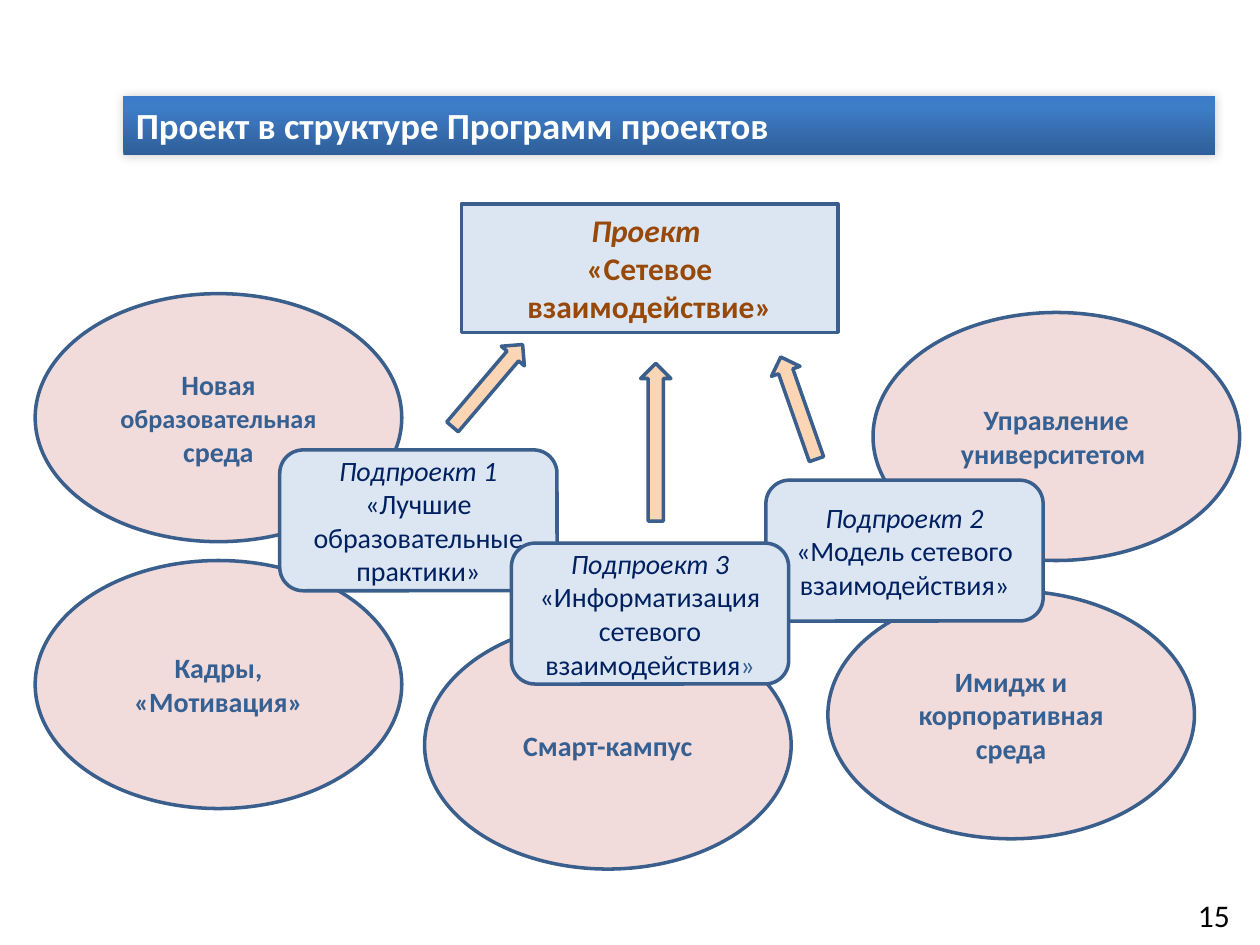
from lxml import etree
from pptx import Presentation
from pptx import util as u
from pptx.dml.color import RGBColor
from pptx.enum import shapes, text
from pptx.oxml import parse_xml

NS = "http://schemas.openxmlformats.org/drawingml/2006/main"
KIND = shapes.MSO_SHAPE
EDGE, PALE, ROSE, PEACH = "3A5F8C", "DCE6F2", "F2DCDB", "FCD5B5"
WHITE, BLACK, BROWN, STEEL, NAVY = "FFFFFF", "000000", "984807", "376092", "002060"


def paint(target, color):
    target.rgb = RGBColor.from_string(color)


def write(frame, paras, size, color, bold=False, align=text.PP_ALIGN.CENTER):
    """Each paragraph is a list of runs: (words, changes to the base font)."""
    frame.word_wrap = True
    for i, runs in enumerate(paras):
        para = frame.paragraphs[0] if i == 0 else frame.add_paragraph()
        para.alignment = align
        for words, diff in runs:
            run = para.add_run()
            run.text = words
            font = run.font
            font.name = "Calibri"
            font.size = u.Pt(diff.get("size", size))
            font.bold = bold
            font.italic = diff.get("italic", False)
            paint(font.color, diff.get("color", color))


def place(slide, kind, box, fill):
    shape = slide.shapes.add_shape(kind, *map(u.Cm, box))
    shape.shadow.inherit = False
    shape.fill.solid()
    paint(shape.fill.fore_color, fill)
    paint(shape.line.color, EDGE)
    shape.line.width = u.Pt(2)
    shape.text_frame.vertical_anchor = text.MSO_ANCHOR.MIDDLE
    return shape


def number(slide, box):
    frame = slide.shapes.add_textbox(*map(u.Cm, box)).text_frame
    write(frame, [[("15", {})]], 18, BLACK, align=text.PP_ALIGN.LEFT)


def title(slide, box):
    bar = place(slide, KIND.RECTANGLE, box, EDGE)
    bar.line.fill.background()
    stops = "".join(
        f'<a:gs pos="{pos * 1000}"><a:srgbClr val="{color}"/></a:gs>'
        for pos, color in [(0, "2F5F99"), (80, "3D7CC7"), (100, "3A7CCB")])
    props = bar.fill._xPr
    old = props.find(f"{{{NS}}}solidFill")
    props.replace(old, parse_xml(
        f'<a:gradFill xmlns:a="{NS}" rotWithShape="1"><a:gsLst>{stops}</a:gsLst>'
        '<a:lin ang="16200000" scaled="0"/></a:gradFill>'))
    glow = etree.SubElement(props.find(f"{{{NS}}}effectLst"), f"{{{NS}}}outerShdw",
                            blurRad=str(u.Pt(6)), dist="0", dir="18900000")
    shade = etree.SubElement(glow, f"{{{NS}}}srgbClr", val=BLACK)
    etree.SubElement(shade, f"{{{NS}}}alpha", val="20000")
    write(bar.text_frame, [[("Проект в структуре Программ проектов", {})]],
          21, WHITE, True, text.PP_ALIGN.LEFT)


def project(slide, box):
    shape = place(slide, KIND.RECTANGLE, box, PALE)
    write(shape.text_frame, [[("Проект ", {"italic": True})],
                             [("«Сетевое взаимодействие»", {})]], 18, BROWN, True)


def program(slide, box, paras):
    shape = place(slide, KIND.OVAL, box, ROSE)
    write(shape.text_frame, paras, 16, STEEL, True)


def part(slide, box, index, runs):
    shape = place(slide, KIND.ROUNDED_RECTANGLE, box, PALE)
    head = [(f"Подпроект {index}", {"italic": True})]
    write(shape.text_frame, [head, runs], 16, NAVY)


def arrow(slide, box, turn):
    place(slide, KIND.RIGHT_ARROW, box, PEACH).rotation = turn


def main():
    deck = Presentation()
    deck.slide_width, deck.slide_height = u.Cm(25.4), u.Cm(19.05)
    slide = deck.slides.add_slide(deck.slide_layouts[6])
    number(slide, (23.9, 17.93, 1.3, 1.02))
    title(slide, (2.49, 1.93, 22, 1.19))
    project(slide, (9.3, 4.11, 7.59, 2.59))

    programs = [
        (0.71, 5.92, [[("Новая ", {}), ("образовательная", {"size": 15}), (" среда", {})]]),
        (0.71, 11.3, [[("Кадры,", {})], [("«Мотивация»", {})]]),
        (17.6, 6.3, [[("Управление университетом ", {})]]),
        (16.69, 11.91, [[("Имидж и корпоративная среда", {})]]),
        (8.56, 12.52, [[("Смарт-кампус", {})]]),
    ]
    for x, y, paras in programs:
        program(slide, (x, y, 7.39, 5), paras)

    parts = [
        (5.64, 9.07, [("«Лучшие образовательные практики»", {})]),
        (15.44, 9.68, [("«Модель сетевого взаимодействия»", {})]),
        (10.31, 10.95, [("«Информатизация сетевого взаимодействия", {}),
                        ("»", {"color": STEEL})]),
    ]
    for i, (x, y, runs) in enumerate(parts, 1):
        part(slide, (x, y, 5.59, 2.84), i, runs)

    for x, y, length, turn in [(8.74, 7.47, 2.18, 310.4),
                               (11.63, 8.61, 3.18, 270),
                               (15.01, 7.92, 2.18, 250.7)]:
        arrow(slide, (x, y, length, 0.61), turn)
    deck.save("out.pptx")


if __name__ == "__main__":
    main()
